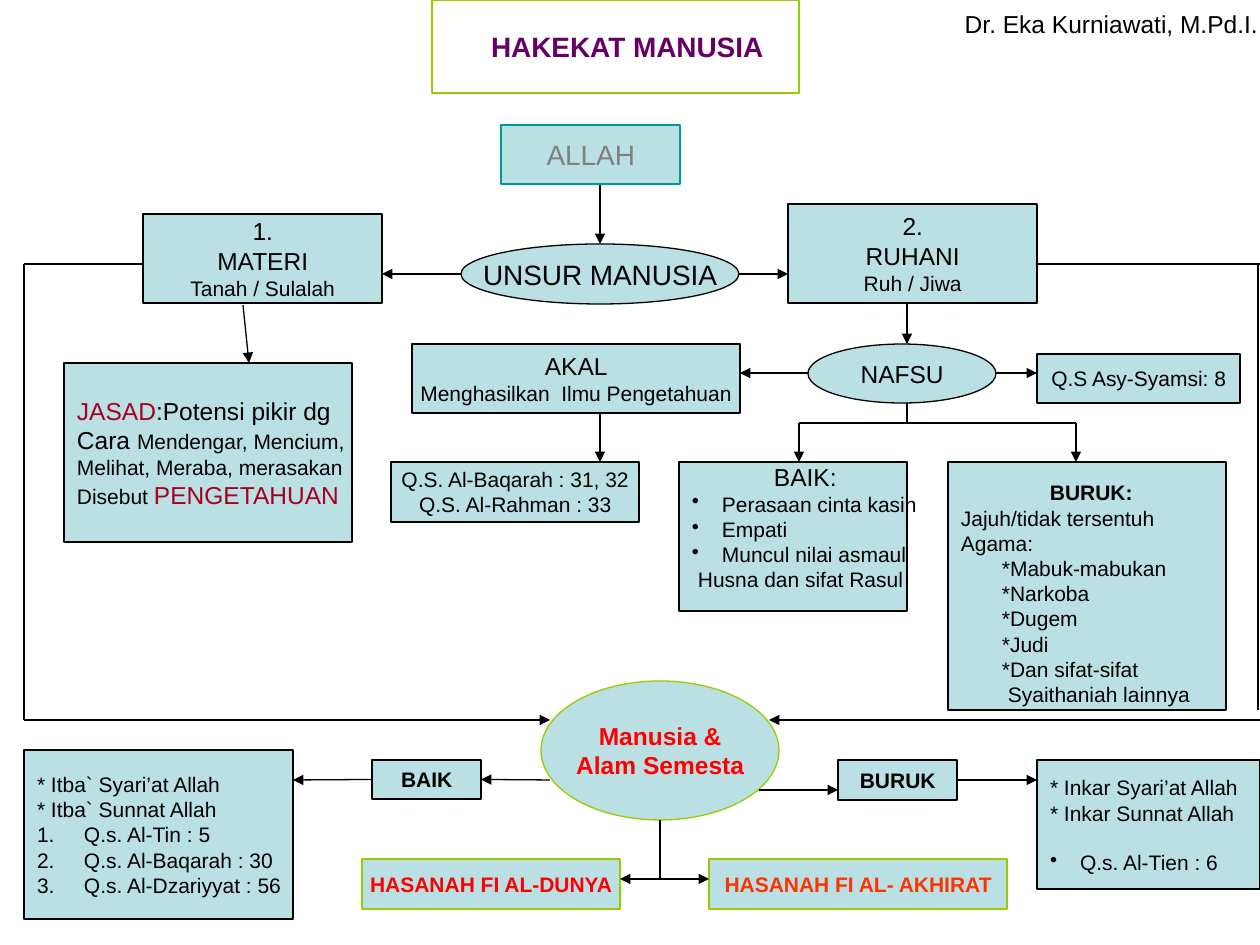
from dataclasses import dataclass

import pptx
import pptx.dml.color
import pptx.enum.shapes
import pptx.enum.text
import pptx.oxml.ns
import pptx.util
from lxml import etree

PX = 914400 / 126
BLACK, RED, MAROON, GREEN = "000000", "FF0000", "A50021", "99CC00"
PALE = "BBE0E3"
RECT = pptx.enum.shapes.MSO_SHAPE.RECTANGLE
OVAL = pptx.enum.shapes.MSO_SHAPE.OVAL
CENTER = pptx.enum.text.PP_ALIGN.CENTER
LEFT = pptx.enum.text.PP_ALIGN.LEFT
LEFT_SIDE, RIGHT_SIDE = 1, 3


def emu(px):
    return pptx.util.Emu(round(px * PX))


def rgb(value):
    return pptx.dml.color.RGBColor.from_string(value)


def sub(parent, tag, **attrs):
    return etree.SubElement(parent, pptx.oxml.ns.qn(tag), attrs)


@dataclass
class Para:
    """One paragraph: text is a string or a list of (text, size, color) runs."""
    text: object
    size: int = 12
    color: str = BLACK
    bold: bool = False
    left: int = 0
    bullet: str = ""
    before: int = 0


class Diagram:
    font = "Arial"
    line_width = pptx.util.Pt(0.75)

    def __init__(self, slide):
        self.slide = slide

    def style_font(self, font, size, color):
        font.size = pptx.util.Pt(size)
        font.color.rgb = rgb(color)

    def fill_text(self, tf, paras, align):
        for i, item in enumerate(paras):
            p = tf.add_paragraph() if i else tf.paragraphs[0]
            p.alignment = align
            ppr = p._p.get_or_add_pPr()
            if item.left:
                ppr.set("marL", str(emu(item.left)))
                ppr.set("indent", str(-emu(item.left) if item.bullet else 0))
            if item.bullet == "1.":
                sub(ppr, "a:buAutoNum", type="arabicPeriod")
            elif item.bullet:
                sub(ppr, "a:buChar", char=item.bullet)
            if item.before:
                p.space_before = pptx.util.Pt(item.before)
            p.font.name = self.font
            p.font.bold = item.bold
            if isinstance(item.text, str):
                self.style_font(p.font, item.size, item.color)
                p.add_run().text = item.text
            else:
                for text, size, color in item.text:
                    r = p.add_run()
                    r.text = text
                    self.style_font(r.font, size, color)

    def box(self, x, y, w, h, *paras, shape=RECT, fill=PALE, line=BLACK,
            align=CENTER, top=None, margin=13):
        """Text is centred vertically unless top gives its distance from the edge."""
        s = self.slide.shapes.add_shape(shape, *map(emu, (x, y, w, h)))
        s.shadow.inherit = False
        if fill:
            s.fill.solid()
            s.fill.fore_color.rgb = rgb(fill)
        else:
            s.fill.background()
        s.line.color.rgb = rgb(line)
        s.line.width = self.line_width
        tf = s.text_frame
        tf.word_wrap = False
        tf.margin_left = emu(margin)
        anchor = pptx.enum.text.MSO_ANCHOR
        tf.vertical_anchor = anchor.MIDDLE if top is None else anchor.TOP
        if top is not None:
            tf.margin_top = emu(top)
        self.fill_text(tf, paras, align)
        return s

    def label(self, x, y, w, h, para):
        tf = self.slide.shapes.add_textbox(*map(emu, (x, y, w, h))).text_frame
        tf.word_wrap = True
        self.fill_text(tf, [para], CENTER)

    def line(self, *points, head=False, tail=True, begin=None, end=None):
        """Straight segments through the points; the tail arrow is on the last."""
        segments = list(zip(points, points[1:]))
        for i, (a, b) in enumerate(segments):
            c = self.slide.shapes.add_connector(
                pptx.enum.shapes.MSO_CONNECTOR.STRAIGHT, *map(emu, (*a, *b)))
            c.line.color.rgb = rgb(BLACK)
            c.line.width = self.line_width
            ln = c.line._get_or_add_ln()
            if head and i == 0:
                sub(ln, "a:headEnd", type="triangle")
            if tail and i == len(segments) - 1:
                sub(ln, "a:tailEnd", type="triangle")
            sub(c._element.spPr, "a:effectLst")
            if begin and i == 0:
                c.begin_connect(*begin)
            if end and i == len(segments) - 1:
                c.end_connect(*end)


def main():
    prs = pptx.Presentation()
    prs.slide_width, prs.slide_height = emu(1260), emu(945)
    d = Diagram(prs.slides.add_slide(prs.slide_layouts[6]))

    # Title and author
    d.box(432, 0, 367, 93, Para("HAKEKAT MANUSIA", 16, "660066", True),
          fill=None, line=GREEN, margin=36)
    d.label(912, 3, 399, 66, Para("Dr. Eka Kurniawati, M.Pd.I.", 14))

    # Origin and the two elements
    d.box(501, 125, 179, 59, Para("ALLAH", 16, "808080"), line="009999")
    d.box(461, 244, 278, 60, Para("UNSUR MANUSIA", 16), shape=OVAL)
    d.box(143, 214, 239, 89, Para("1.", 14), Para("MATERI", 14), Para("Tanah / Sulalah"))
    d.box(788, 204, 249, 99, Para("2.", 14), Para("RUHANI", 14), Para("Ruh / Jiwa"))

    # Body, reason and desire
    d.box(64, 363, 288, 179,
          Para([("JASAD", 14, MAROON), (":Potensi pikir dg", 14, BLACK)]),
          Para([("Cara ", 14, BLACK), ("Mendengar, Mencium,", 12, BLACK)]),
          Para("Melihat, Meraba, merasakan"),
          Para([("Disebut ", 12, BLACK), ("PENGETAHUAN", 14, MAROON)]), align=LEFT)
    d.box(412, 344, 328, 69, Para("AKAL", 14), Para("Menghasilkan  Ilmu Pengetahuan"))
    d.box(808, 344, 188, 59, Para("NAFSU", 14), shape=OVAL)
    d.box(1037, 354, 203, 49, Para("Q.S Asy-Syamsi: 8"))
    d.box(391, 462, 248, 60, Para("Q.S. Al-Baqarah : 31, 32"), Para("Q.S. Al-Rahman : 33"))

    # Good and bad desires
    good = ["Perasaan cinta kasih", "Empati", "Muncul nilai asmaul"]
    d.box(679, 462, 228, 149, Para("BAIK:", 14, left=82),
          *[Para(t, left=30, bullet="•") for t in good],
          Para("Husna dan sifat Rasul", left=6), align=LEFT, top=0)
    bad = ["*Mabuk-mabukan", "*Narkoba", "*Dugem", "*Judi", "*Dan sifat-sifat"]
    d.box(948, 462, 278, 248, Para("BURUK:", bold=True, left=89),
          Para("Jajuh/tidak tersentuh"), Para("Agama:"),
          *[Para(t, left=41) for t in bad],
          Para("Syaithaniah lainnya", left=47), align=LEFT, top=18)

    # Mankind and the universe, with its outcomes
    d.box(541, 681, 238, 139, Para("Manusia &", 14, RED, True),
          Para("Alam Semesta", 14, RED, True), shape=OVAL, line=GREEN)
    baik = d.box(372, 760, 109, 39, Para("BAIK", bold=True))
    buruk = d.box(838, 760, 119, 40, Para("BURUK", bold=True))
    d.box(362, 859, 258, 50, Para("HASANAH FI AL-DUNYA", 12, RED, True), line=GREEN)
    d.box(709, 859, 298, 50, Para("HASANAH FI AL- AKHIRAT", 12, "FF3300", True), line=GREEN)
    verses = ["Q.s. Al-Tin : 5", "Q.s. Al-Baqarah : 30", "Q.s. Al-Dzariyyat : 56"]
    d.box(24, 750, 269, 169, Para("* Itba` Syari’at Allah"), Para("* Itba` Sunnat Allah"),
          *[Para(t, left=47, bullet="1.") for t in verses], align=LEFT)
    d.box(1037, 760, 223, 129, Para("* Inkar Syari’at Allah"), Para("* Inkar Sunnat Allah"),
          Para("Q.s. Al-Tien : 6", left=30, bullet="•", before=14), align=LEFT, top=15)

    # Arrows between the boxes
    d.line((600, 185), (600, 244))
    d.line((739, 274), (788, 274))
    d.line((461, 274), (382, 274))
    d.line((243, 305), (249, 363))
    d.line((907, 303), (907, 344))
    d.line((996, 373), (1037, 373))
    d.line((808, 373), (740, 373))
    d.line((600, 413), (600, 462))

    # Fork from desire to good and bad
    d.line((907, 403), (907, 423), tail=False)
    d.line((907, 423), (799, 423), (799, 462))
    d.line((907, 423), (1076, 423), (1076, 462))

    # Outer routes back to mankind
    d.line((143, 264), (24, 264), (24, 720), (550, 720))
    d.line((1037, 264), (1260, 264), tail=False)
    d.line((1258, 264), (1258, 710), tail=False)
    d.line((1260, 720), (769, 720))

    # Outcome arrows
    d.line((550, 780), (481, 780), end=(baik, RIGHT_SIDE))
    d.line((372, 780), (293, 780), begin=(baik, LEFT_SIDE))
    d.line((759, 790), (838, 790))
    d.line((957, 780), (1037, 780), begin=(buruk, RIGHT_SIDE))
    d.line((660, 820), (660, 879), tail=False)
    d.line((620, 879), (709, 879), head=True)

    prs.save("out.pptx")


if __name__ == "__main__":
    main()
